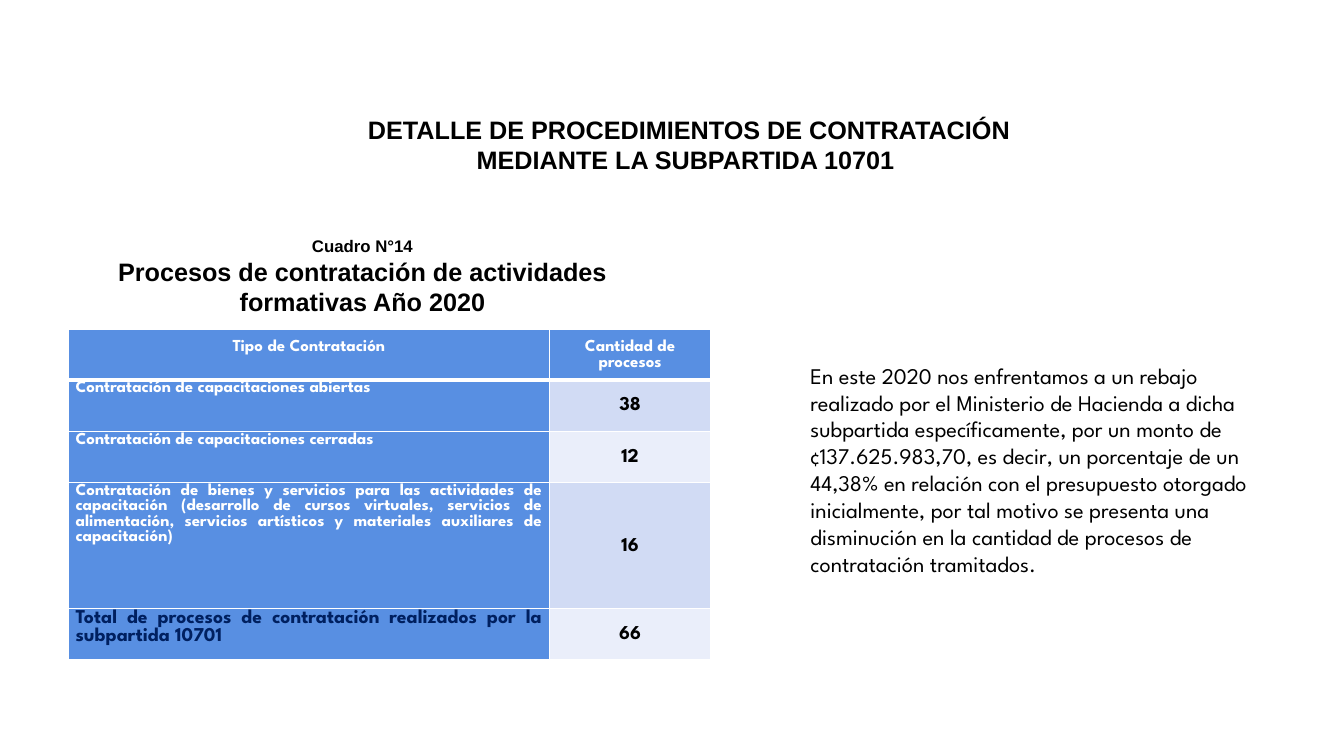
from dataclasses import dataclass

from lxml.etree import SubElement
from pptx import Presentation
from pptx.dml.color import RGBColor as RGB
from pptx.enum.text import MSO_ANCHOR as ANCHOR, PP_ALIGN as ALIGN
from pptx.oxml.ns import qn
from pptx.util import Inches, Pt


@dataclass(frozen=True)
class Theme:
    """Colours, fonts and type sizes of the slide."""
    black: str = "000000"
    white: str = "FFFFFF"
    navy: str = "002060"
    blue: str = "588FE2"
    bands: tuple = ("D1DBF4", "EAEEFA")
    heading: str = "Arial"
    body: str = "League Spartan"
    title: int = 18
    text: int = 16
    figure: int = 14
    small: int = 12


class Deck:
    """Draws styled elements on the current slide."""

    def __init__(self, prs, theme):
        self.t = theme
        self.s = prs.slides.add_slide(prs.slide_layouts[6])

    def style(self, p, size, font, color, bold, align):
        """Formats one paragraph and its runs."""
        p.alignment = align
        for r in p.runs:
            r.font.size = Pt(size)
            r.font.name = font
            r.font.bold = bold
            r.font.color.rgb = RGB.from_string(color)

    def text(self, box, lines, font, bold=False, align=ALIGN.LEFT):
        """Adds a text box from pairs of wording and size."""
        tf = self.s.shapes.add_textbox(*map(Inches, box)).text_frame
        tf.word_wrap = True
        tf.text = "\n".join(words for words, _ in lines)
        for p, (_, size) in zip(tf.paragraphs, lines):
            self.style(p, size, font, self.t.black, bold, align)

    def borders(self, cell, bottom):
        """Gives a cell white edges with a chosen bottom width."""
        props = cell._tc.get_or_add_tcPr()
        edges = (("a:lnL", 1), ("a:lnR", 1), ("a:lnT", 1), ("a:lnB", bottom))
        for i, (tag, width) in enumerate(edges):
            ln = SubElement(props, qn(tag), w=str(Pt(width)))
            fill = SubElement(ln, qn("a:solidFill"))
            SubElement(fill, qn("a:srgbClr"), val=self.t.white)
            props.insert(i, ln)

    def cell(self, cell, words, fill, size, color, align, anchor, bottom=1):
        """Fills one table cell."""
        cell.text = words
        cell.fill.solid()
        cell.fill.fore_color.rgb = RGB.from_string(fill)
        cell.vertical_anchor = anchor
        cell.margin_left = cell.margin_right = Inches(0.07)
        cell.margin_top, cell.margin_bottom = Inches(0.01), 0
        self.style(cell.text_frame.paragraphs[0], size, self.t.body, color, True, align)
        self.borders(cell, bottom)

    def table(self, box, widths, heights, header, rows):
        """Adds the table with a header, labels and banded figures."""
        t = self.t
        table = self.s.shapes.add_table(len(heights), len(widths), *map(Inches, box)).table
        for col, width in zip(table.columns, widths):
            col.width = Inches(width)
        for row, height in zip(table.rows, heights):
            row.height = Inches(height)
        for c, words in enumerate(header):
            self.cell(table.cell(0, c), words, t.blue, t.small, t.white,
                      ALIGN.CENTER, ANCHOR.MIDDLE, bottom=3)
        table.cell(0, 0).margin_bottom = Inches(0.16)
        for i, (label, figure) in enumerate(rows):
            total = i == len(rows) - 1
            size, color = (t.figure, t.navy) if total else (t.small, t.white)
            self.cell(table.cell(i + 1, 0), label, t.blue, size, color,
                      ALIGN.JUSTIFY, ANCHOR.TOP)
            self.cell(table.cell(i + 1, 1), figure, t.bands[i % 2], t.figure, t.black,
                      ALIGN.CENTER, ANCHOR.MIDDLE)


def main():
    """Builds and saves the slide."""
    prs = Presentation()
    prs.slide_width, prs.slide_height = Inches(13.33), Inches(7.5)
    t = Theme()
    deck = Deck(prs, t)
    deck.text((3.5, 1.08, 6.67, 0.71),
              [("DETALLE DE PROCEDIMIENTOS DE CONTRATACIÓN MEDIANTE LA SUBPARTIDA 10701 ", t.title)],
              t.heading, True, ALIGN.CENTER)
    deck.text((0.92, 2.29, 5.35, 0.91),
              [("Cuadro N°14", t.small),
               ("Procesos de contratación de actividades formativas Año 2020", t.title)],
              t.heading, True, ALIGN.CENTER)
    deck.text((7.94, 3.54, 4.64, 3.1),
              [("En este 2020 nos enfrentamos a un rebajo realizado por el Ministerio de Hacienda "
                "a dicha subpartida específicamente, por un monto de ¢137.625.983,70, es decir, "
                "un porcentaje de un 44,38% en relación con el presupuesto otorgado inicialmente, "
                "por tal motivo se presenta una disminución en la cantidad de procesos de "
                "contratación tramitados.", t.text)],
              t.body)
    deck.table((0.68, 3.27, 6.37, 3.27), (4.77, 1.6), (0.5, 0.51, 0.51, 1.25, 0.5),
               ("Tipo de Contratación", "Cantidad de procesos"),
               [("Contratación de capacitaciones abiertas", "38"),
                ("Contratación de capacitaciones cerradas", "12"),
                ("Contratación de bienes y servicios para las actividades de capacitación "
                 "(desarrollo de cursos virtuales, servicios de alimentación, servicios "
                 "artísticos y materiales auxiliares de capacitación)", "16"),
                ("Total de procesos de contratación realizados por la subpartida 10701", "66")])
    prs.save("out.pptx")


if __name__ == "__main__":
    main()
